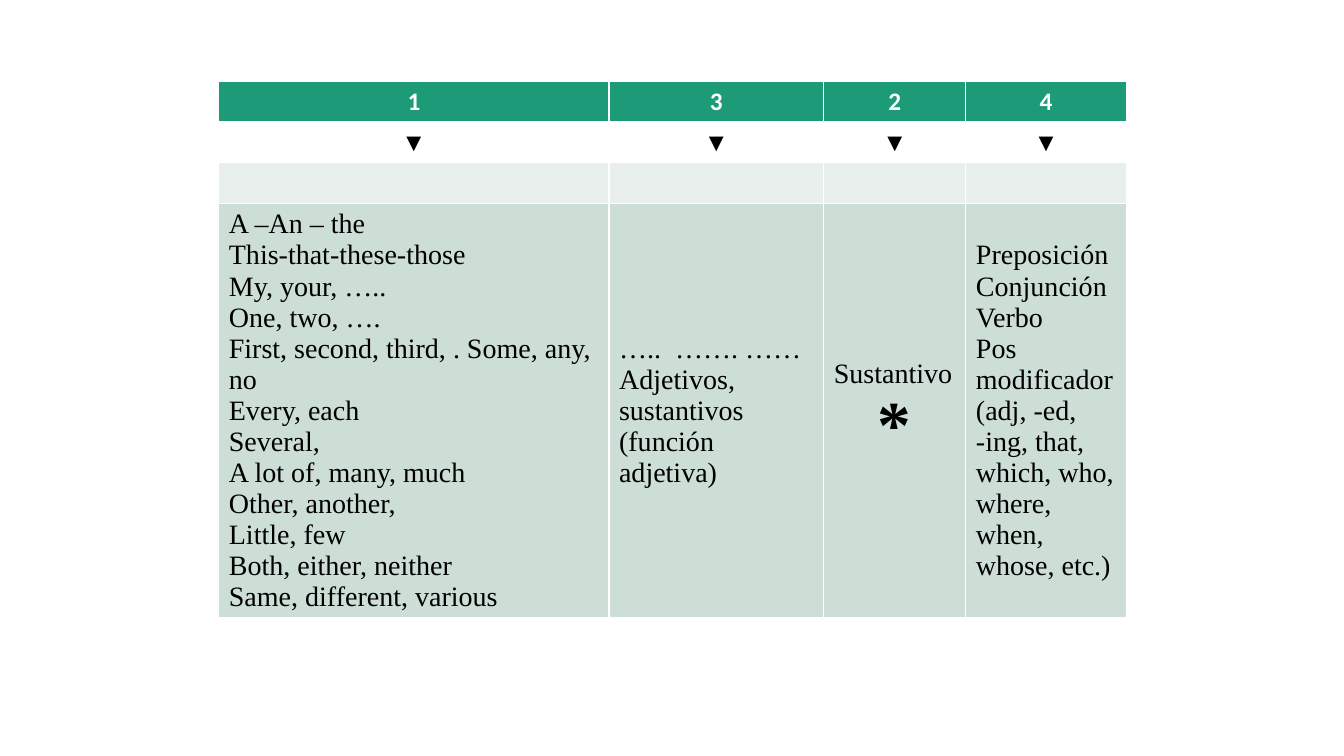
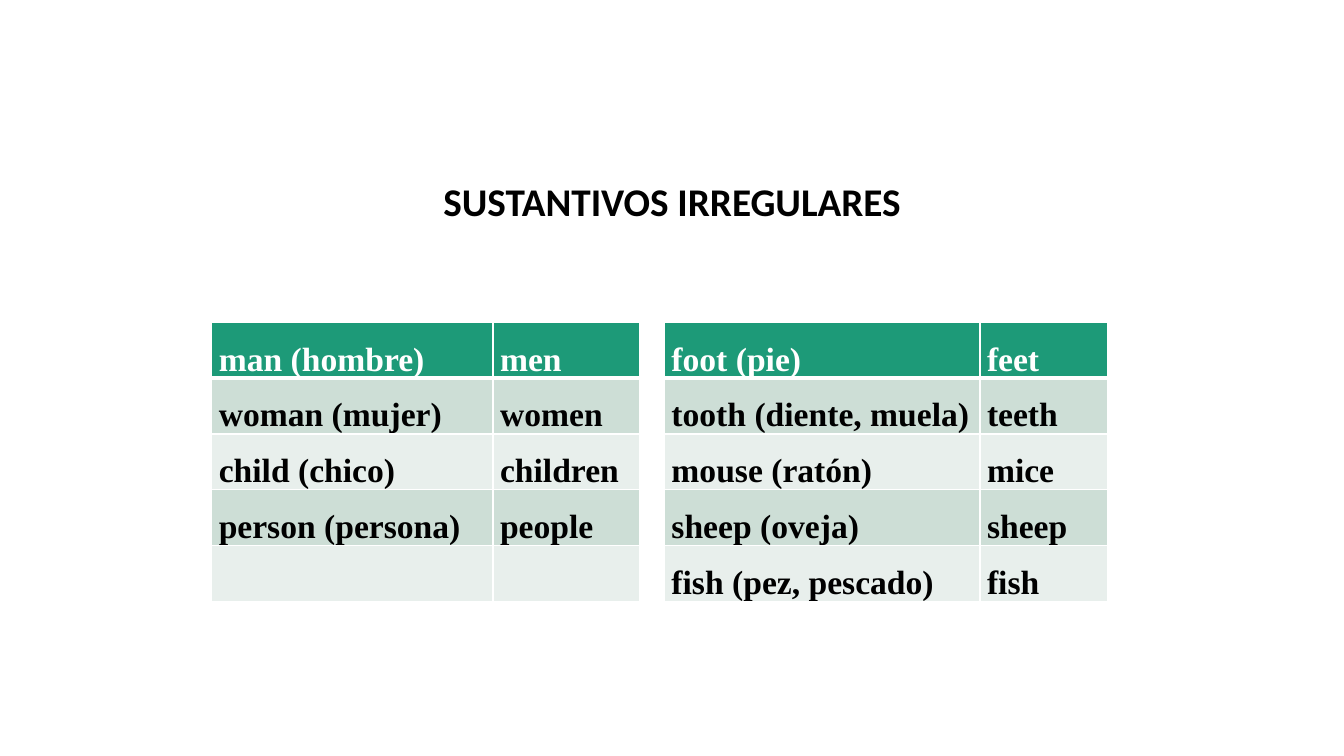
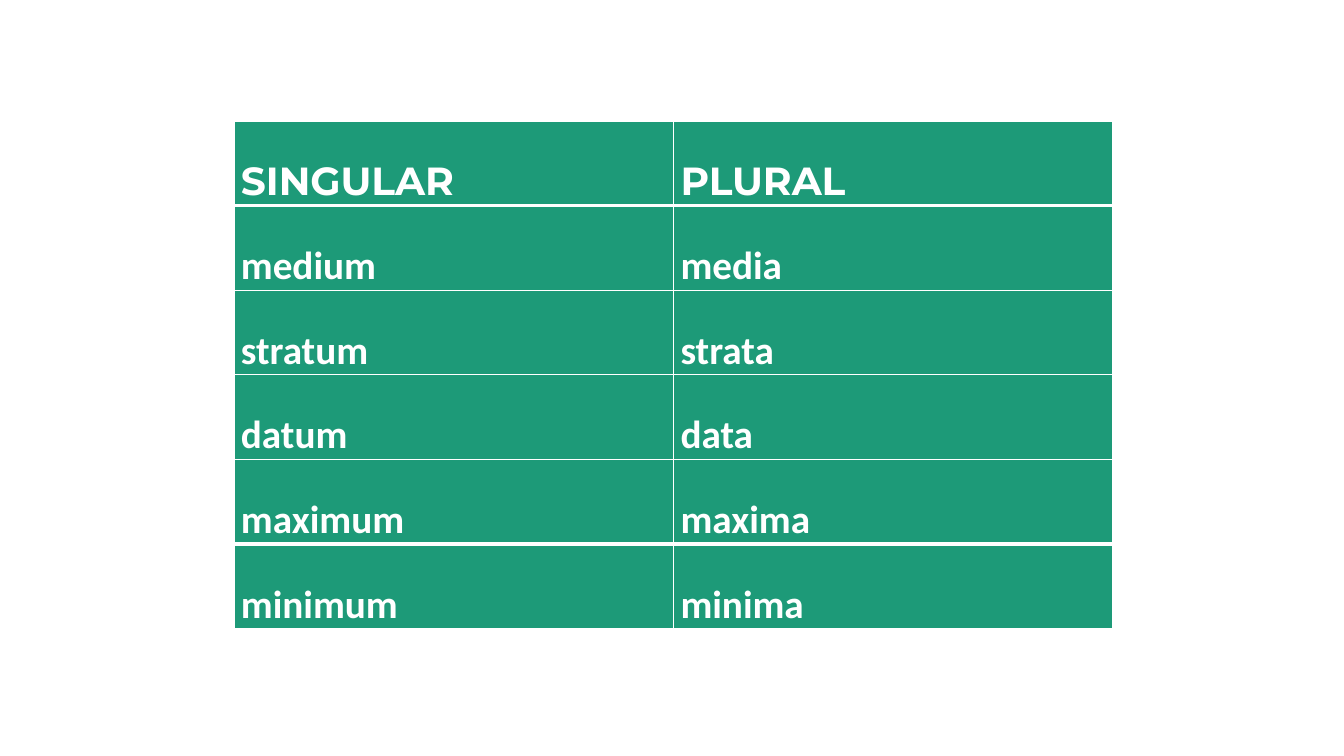
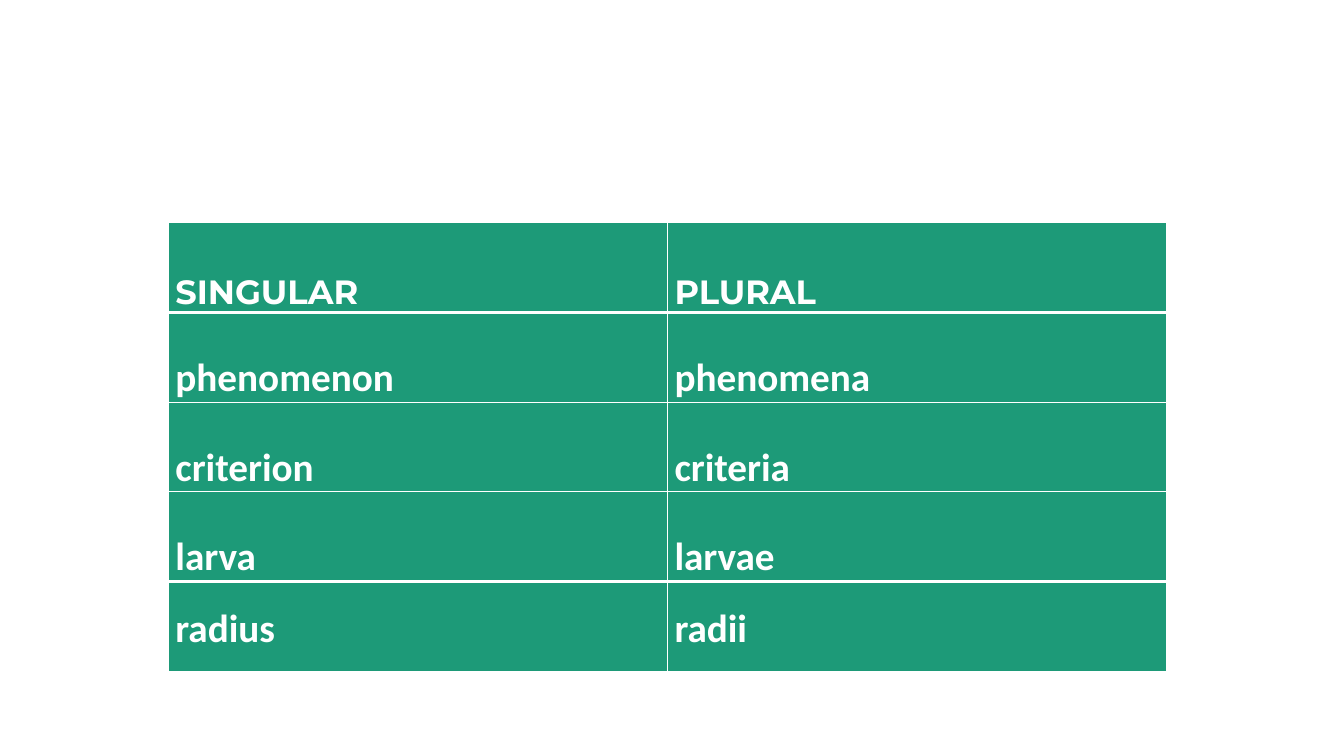
from dataclasses import dataclass

from lxml.etree import SubElement
from pptx import Presentation
from pptx.dml.color import RGBColor
from pptx.enum.text import MSO_ANCHOR as Anchor, MSO_AUTO_SIZE as AutoSize, PP_ALIGN as Align
from pptx.oxml.ns import qn
from pptx.util import Inches, Pt


@dataclass(frozen=True)
class Theme:
    green: str = "1D9A78"
    band: str = "CDDED6"
    pale: str = "E8EFEC"
    white: str = "FFFFFF"
    black: str = "000000"
    sans: str = "Calibri"
    serif: str = "Times New Roman"
    display: str = "Montserrat"
    small: int = 18
    text: int = 20
    medium: int = 24
    large: int = 28
    star: int = 48
    thin: int = 1
    thick: int = 3


theme = Theme()


def add_grid(page, left, top, widths, heights, fills, thick_rules):
    """Add a table with one fill per row; thick_rules are the rows whose top edge is thick."""
    frame = page.shapes.add_table(len(heights), len(widths), Inches(left), Inches(top),
                                  Inches(sum(widths)), Inches(sum(heights)))
    table = frame.table
    table.first_row = table.horz_banding = False
    for column, width in zip(table.columns, widths):
        column.width = Inches(width)
    for index, (row, height, fill) in enumerate(zip(table.rows, heights, fills)):
        row.height = Inches(height)
        edges = {"a:lnL": theme.thin, "a:lnR": theme.thin,
                 "a:lnT": theme.thick if index in thick_rules else theme.thin,
                 "a:lnB": theme.thick if index + 1 in thick_rules else theme.thin}
        for cell in row.cells:
            properties = cell._tc.get_or_add_tcPr()
            for tag, weight in edges.items():
                line = SubElement(properties, qn(tag), w=str(Pt(weight)))
                SubElement(SubElement(line, qn("a:solidFill")), qn("a:srgbClr"), val=theme.white)
            cell.fill.solid()
            cell.fill.fore_color.rgb = RGBColor.from_string(fill)
    return table


def write(box, text, font, size, color, bold=False, align=None, spacing=None):
    """Fill a cell or text frame, one paragraph per line of text."""
    frame = getattr(box, "text_frame", box)
    frame.text = text
    for para in frame.paragraphs:
        para.alignment = align
        para.line_spacing = spacing
        for span in para.runs:
            for name, value in {"name": font, "size": Pt(size), "bold": bold}.items():
                setattr(span.font, name, value)
            span.font.color.rgb = RGBColor.from_string(color)


deck = Presentation()
deck.slide_width, deck.slide_height = Inches(13.33), Inches(7.5)
title_only, blank = deck.slide_layouts[5], deck.slide_layouts[6]

# Slide 1: word order in the noun phrase
page = deck.slides.add_slide(blank)
table = add_grid(page, 2.17, 0.81, [3.87, 2.13, 1.41, 1.59], [0.39, 0.4, 0.37, 4.11],
                 [theme.green, theme.white, theme.pale, theme.band], {1})
word_groups = {
    "1": """A –An – the
This-that-these-those
My, your, …..
One, two, ….
First, second, third, . Some, any, no
Every, each
Several,
A lot of, many, much
Other, another,
Little, few
Both, either, neither
Same, different, various""",
    "3": "…..  ……. ……\nAdjetivos, sustantivos (función adjetiva)",
    "2": "Sustantivo\n*",
    "4": """Preposición
Conjunción
Verbo
Pos modificador
(adj, -ed, -ing, that, which, who, where, when, whose, etc.)""",
}
for column, (number, words) in enumerate(word_groups.items()):
    write(table.cell(0, column), number, theme.sans, theme.small, theme.white, True, Align.CENTER)
    write(table.cell(1, column), "▼", theme.serif, theme.small, theme.black, align=Align.CENTER)
    write(table.cell(3, column), words, theme.serif, theme.text, theme.black)
for cell in table.iter_cells():
    cell.vertical_anchor = Anchor.MIDDLE
star = table.cell(3, 2).text_frame.paragraphs[1]
star.alignment = Align.CENTER
star.runs[0].font.size, star.runs[0].font.bold = Pt(theme.star), True

# Slide 2: irregular nouns
page = deck.slides.add_slide(title_only)
title = page.shapes.title
title.left, title.width = int(deck.slide_width * 0.07), int(deck.slide_width * 0.86)
title.top, title.height = int(deck.slide_height * 0.22), int(deck.slide_height * 0.1)
title.text_frame.auto_size = AutoSize.NONE
title.text_frame.vertical_anchor = Anchor.MIDDLE
write(title, "SUSTANTIVOS IRREGULARES", theme.sans, theme.large, theme.black, True,
      Align.CENTER, 0.9)

irregular_nouns = [
    ["man (hombre)", "men", "", "foot (pie)", "feet"],
    ["woman (mujer)", "women", "", "tooth (diente, muela)", "teeth"],
    ["child (chico)", "children", "", "mouse (ratón)", "mice"],
    ["person (persona)", "people", "", "sheep (oveja)", "sheep"],
    ["", "", "", "fish (pez, pescado)", "fish"],
]
table = add_grid(page, 2.1, 3.2, [2.79, 1.45, 0.25, 3.13, 1.27], [0.55] * 5,
                 [theme.green, theme.band, theme.pale, theme.band, theme.pale], {1})
noun_tables = [table]
for row, words in enumerate(irregular_nouns):
    for column, word in enumerate(words):
        write(table.cell(row, column), word, theme.serif, theme.medium,
              theme.black if row else theme.white, True, spacing=1.5)
    table.cell(row, 2).fill.fore_color.rgb = RGBColor.from_string(theme.white)

# Slides 3 and 4: Latin and Greek plurals
plural_pages = [
    (2.32, 1.2, 4.36, 0.84, theme.large,
     [("medium", "media"), ("stratum", "strata"), ("datum", "data"),
      ("maximum", "maxima"), ("minimum", "minima")]),
    (1.67, 2.21, 4.95, 0.89, theme.medium,
     [("phenomenon", "phenomena"), ("criterion", "criteria"),
      ("larva", "larvae"), ("radius", "radii")]),
]
for left, top, width, height, heading_size, pairs in plural_pages:
    page = deck.slides.add_slide(blank)
    count = len(pairs) + 1
    table = add_grid(page, left, top, [width] * 2, [height] * count,
                     [theme.green] * count, {1, count - 1})
    noun_tables.append(table)
    for row, words in enumerate([("SINGULAR", "PLURAL"), *pairs]):
        font, size = (theme.sans, theme.large) if row else (theme.display, heading_size)
        for column, word in enumerate(words):
            write(table.cell(row, column), word, font, size, theme.white, True, spacing=1.5)

for table in noun_tables:
    for cell in table.iter_cells():
        cell.vertical_anchor = Anchor.BOTTOM
        cell.margin_left = cell.margin_right = Inches(0.07)
        cell.margin_top = cell.margin_bottom = 0
for cell in noun_tables[-1].rows[4].cells:
    cell.vertical_anchor = Anchor.TOP

deck.save("out.pptx")
